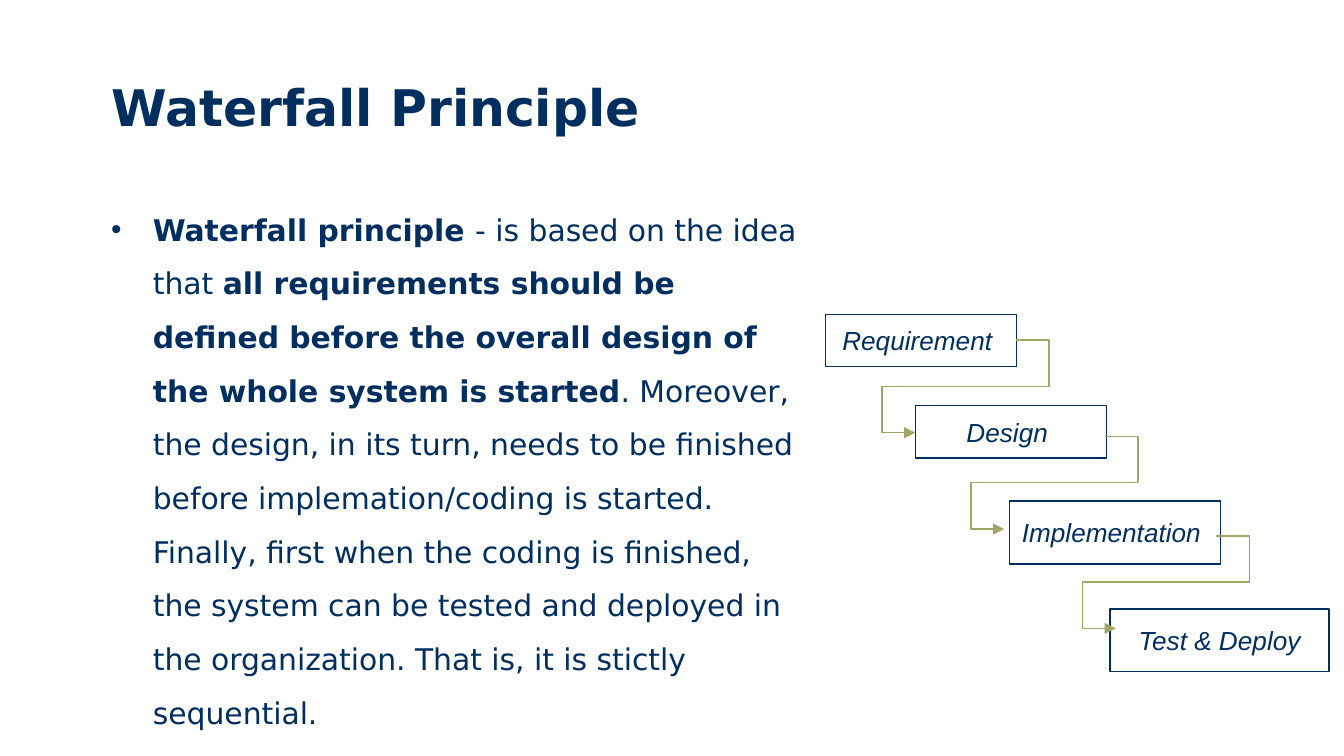
"""Build a slide that explains the waterfall principle with a staircase of steps."""
from dataclasses import dataclass

from lxml.etree import SubElement as Sub
from pptx import Presentation
from pptx.dml.color import RGBColor as RGB
from pptx.enum.shapes import MSO_CONNECTOR as Link, MSO_SHAPE as Kind
from pptx.enum.text import MSO_ANCHOR as Anchor, PP_ALIGN as Align
from pptx.oxml.ns import qn
from pptx.util import Cm, Pt


@dataclass(frozen=True)
class Theme:
    navy: RGB = RGB(0x00, 0x2F, 0x5F)
    olive: RGB = RGB(0xA1, 0xA6, 0x67)
    sans: str = "DejaVu Sans"
    label: str = "Arial"
    head: Pt = Pt(27)
    body: Pt = Pt(16)
    step: Pt = Pt(14)
    rule: Pt = Pt(0.75)


theme = Theme()


def style(font, name, size):
    font.name, font.size = name, size
    font.color.rgb = theme.navy


deck = Presentation()
deck.slide_width, deck.slide_height = Cm(25.4), Cm(14.29)
slide = deck.slides.add_slide(deck.slide_layouts[5])
shapes = slide.shapes

title = shapes.title
title.left, title.top, title.width, title.height = Cm(1.85), Cm(1.19), Cm(19.02), Cm(1.65)
title.text_frame.text = "Waterfall Principle"
title.text_frame.vertical_anchor = Anchor.MIDDLE
para = title.text_frame.paragraphs[0]
para.alignment = Align.LEFT
style(para.font, theme.sans, theme.head)
para.font.bold = True

box = shapes.add_textbox(Cm(1.85), Cm(3.53), Cm(13.67), Cm(10.52))
box.text_frame.word_wrap = True
para = box.text_frame.paragraphs[0]
para.line_spacing = 1.5
props = para._p.get_or_add_pPr()
props.set("marL", str(Cm(0.79)))
props.set("indent", str(-Cm(0.79)))
Sub(props, qn("a:buFont"), typeface=theme.label)
Sub(props, qn("a:buChar"), char="•")
style(para.font, theme.sans, theme.body)
parts = [
    ("Waterfall principle ", True),
    ("- is based on the idea that ", False),
    ("all requirements should be defined before the overall design "
     "of the whole system is started", True),
    (". Moreover, the design, in its turn, needs to be finished before "
     "implemation/coding is started. Finally, first when the coding is finished, "
     "the system can be tested and deployed in the organization. "
     "That is, it is stictly sequential.", False),
]
for text, bold in parts:
    run = para.add_run()
    run.text, run.font.bold = text, bold

steps = [
    ("Requirement ", 15.6, 5.94, 3.61, 0.99),
    ("Design ", 17.3, 7.67, 3.61, 0.99),
    ("Implementation ", 19.08, 9.47, 3.99, 1.19),
    ("Test & Deploy", 20.98, 11.51, 4.14, 1.19),
]
for text, *place in steps:
    step = shapes.add_shape(Kind.RECTANGLE, *map(Cm, place))
    step.shadow.inherit = False
    step.fill.background()
    step.line.color.rgb, step.line.width = theme.navy, theme.rule
    frame = step.text_frame
    frame.text, frame.word_wrap = text, False
    frame.vertical_anchor = Anchor.MIDDLE
    para = frame.paragraphs[0]
    para.alignment = Align.CENTER
    style(para.font, theme.label, theme.step)
    para.font.italic = True

bends = {"adj1": -33200, "adj2": 49900, "adj3": 133200}
for left, top in [(19.2, 6.43), (20.88, 8.25), (22.99, 10.13)]:
    arrow = shapes.add_connector(Link.ELBOW, Cm(left), Cm(top), Cm(left - 1.9), Cm(top + 1.75))
    arrow.line.color.rgb, arrow.line.width = theme.olive, theme.rule
    props = arrow._element.spPr
    shape = props.find(qn("a:prstGeom"))
    shape.set("prst", "bentConnector5")
    guides = shape.find(qn("a:avLst"))
    for name, value in bends.items():
        Sub(guides, qn("a:gd"), name=name, fmla=f"val {value}")
    Sub(arrow.line._get_or_add_ln(), qn("a:tailEnd"), type="triangle")
    Sub(props, qn("a:effectLst"))

deck.save("out.pptx")
